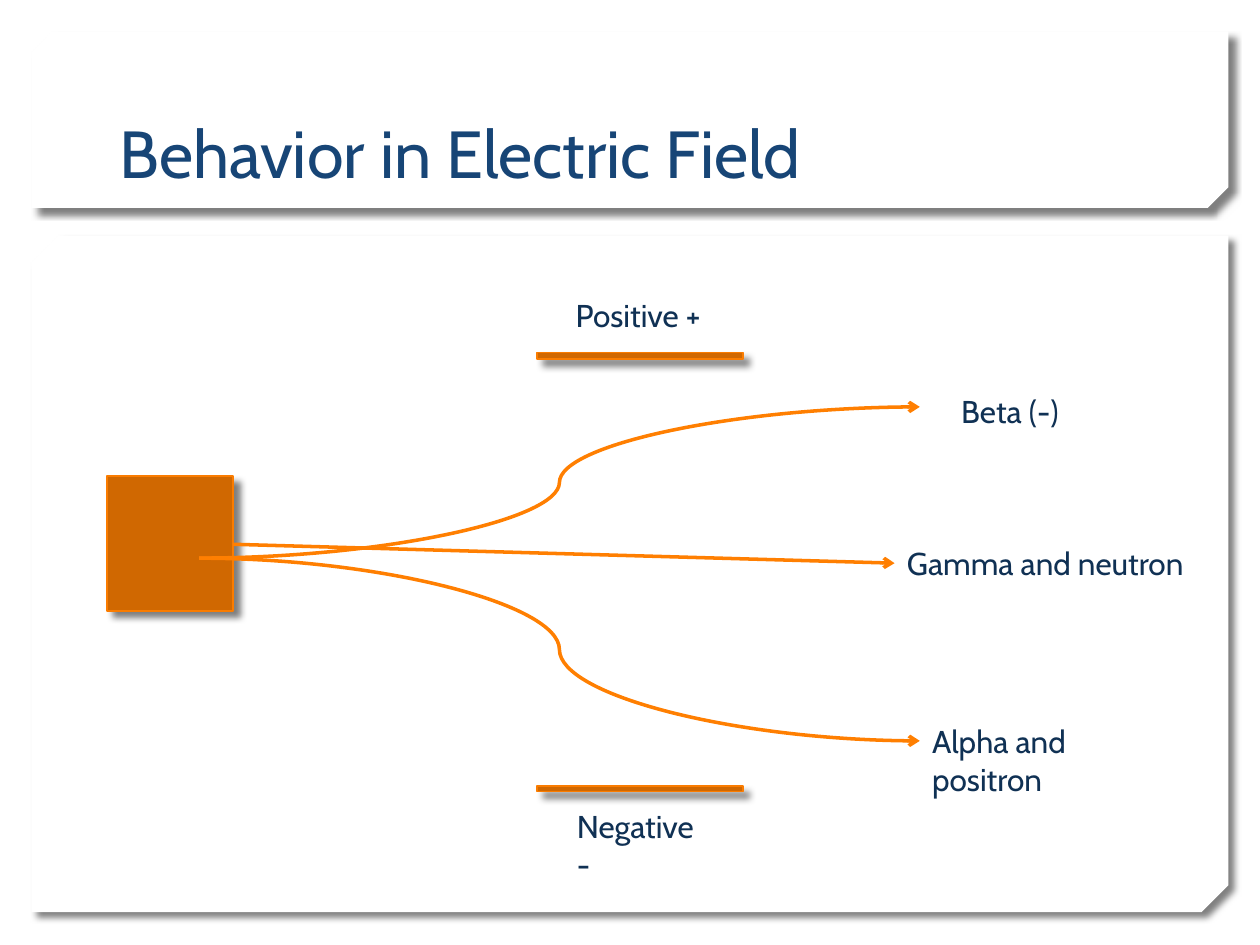
from dataclasses import dataclass

from lxml import etree
from pptx import Presentation
from pptx.dml.color import RGBColor
from pptx.enum.shapes import MSO_CONNECTOR, MSO_SHAPE
from pptx.enum.text import MSO_ANCHOR, PP_ALIGN
from pptx.oxml import parse_xml
from pptx.oxml.ns import nsdecls, qn
from pptx.util import Inches, Pt

RECT = MSO_SHAPE.RECTANGLE
SNIP = MSO_SHAPE.SNIP_2_DIAG_RECTANGLE
MINUS = MSO_SHAPE.MATH_MINUS
CURVE = MSO_CONNECTOR.CURVE
STRAIGHT = MSO_CONNECTOR.STRAIGHT
LEFT = PP_ALIGN.LEFT
TOP = MSO_ANCHOR.TOP
BOTTOM = MSO_ANCHOR.BOTTOM


@dataclass(frozen=True)
class Theme:
    """Hold the colours, font and sizes of the slide."""
    paper: RGBColor = RGBColor.from_string("FFFFFF")
    title: RGBColor = RGBColor.from_string("174576")
    text: RGBColor = RGBColor.from_string("103154")
    fill: RGBColor = RGBColor.from_string("D06801")
    edge: RGBColor = RGBColor.from_string("FA7C00")
    ray: RGBColor = RGBColor.from_string("FF7F01")
    font: str = "Cabin"
    head: int = 38
    body: int = 18


THEME = Theme()


def add_shade(shape):
    """Cast a soft shadow down and to the right."""
    shape.shadow.inherit = False
    effect = shape._element.spPr.find(qn("a:effectLst"))
    effect.append(parse_xml(
        f'<a:outerShdw {nsdecls("a")} blurRad="{Pt(4)}" dist="{Pt(5)}" '
        'dir="2700000" algn="tl" rotWithShape="0"><a:srgbClr val="000000">'
        '<a:alpha val="50000"/></a:srgbClr></a:outerShdw>'))


def add_block(slide, kind, box, fill, edge=None):
    """Add a filled shape with a shadow and an optional edge."""
    shape = slide.shapes.add_shape(kind, *map(Inches, box))
    shape.fill.solid()
    shape.fill.fore_color.rgb = fill
    if edge is None:
        shape.line.fill.background()
    else:
        shape.line.color.rgb = edge
        shape.line.width = Pt(1)
    add_shade(shape)
    return shape


def add_panel(slide, top, height, snip):
    """Add a white panel with snipped corners."""
    panel = add_block(slide, SNIP, (0.25, top, 9.5, height), THEME.paper)
    panel.adjustments[0] = 0
    panel.adjustments[1] = snip
    panel._element.spPr.xfrm.set("flipV", "1")


def set_text(shape, text, size, color, anchor):
    """Write one left-aligned paragraph into a shape."""
    frame = shape.text_frame
    frame.word_wrap = True
    frame.vertical_anchor = anchor
    frame.text = text
    para = frame.paragraphs[0]
    para.alignment = LEFT
    para.font.name = THEME.font
    para.font.size = Pt(size)
    para.font.color.rgb = color


def set_title(slide, text):
    """Place the title in front of the panels."""
    title = slide.shapes.title
    title.left, title.top, title.width, title.height = map(
        Inches, (0.85, 0.32, 8.29, 1.25))
    set_text(title, text, THEME.head, THEME.title, BOTTOM)
    slide.shapes._spTree.append(title._element)


def add_label(slide, text, left, top, width):
    """Add a label beside a plate or ray."""
    box = slide.shapes.add_textbox(*map(Inches, (left, top, width, 0.4)))
    set_text(box, text, THEME.body, THEME.text, TOP)


def add_ray(slide, kind, start, end):
    """Add a ray that ends in an arrowhead."""
    ray = slide.shapes.add_connector(kind, *map(Inches, start + end))
    ray.line.color.rgb = THEME.ray
    ray.line.width = Pt(2)
    etree.SubElement(ray.line._get_or_add_ln(), qn("a:tailEnd"), type="arrow")
    etree.SubElement(ray._element.spPr, qn("a:effectLst"))


def main():
    """Build and save the slide."""
    deck = Presentation()
    deck.slide_width, deck.slide_height = Inches(10), Inches(7.5)
    slide = deck.slides.add_slide(deck.slide_layouts[5])
    add_panel(slide, 1.87, 5.37, 0.04)
    add_panel(slide, 0.25, 1.4, 0.117)
    set_title(slide, "Behavior in Electric Field")
    add_block(slide, RECT, (0.85, 3.78, 1, 1.07), THEME.fill, THEME.edge)
    for top, height in ((2.71, 0.23), (6.17, 0.18)):
        add_block(slide, MINUS, (3.97, top, 2.22, height),
                  THEME.fill, THEME.edge)
    for label in (("Positive +", 4.47, 2.3, 1.4),
                  ("Negative -", 4.48, 6.36, 1.2),
                  ("Beta (-)", 7.53, 3.06, 1.2),
                  ("Gamma and neutron", 7.1, 4.27, 2.6),
                  ("Alpha and positron", 7.3, 5.68, 1.8)):
        add_label(slide, *label)
    for level in (3.23, 5.88):
        add_ray(slide, CURVE, (1.58, 4.43), (7.3, level))
    add_ray(slide, STRAIGHT, (1.85, 4.32), (7.1, 4.47))
    deck.save("out.pptx")


if __name__ == "__main__":
    main()
